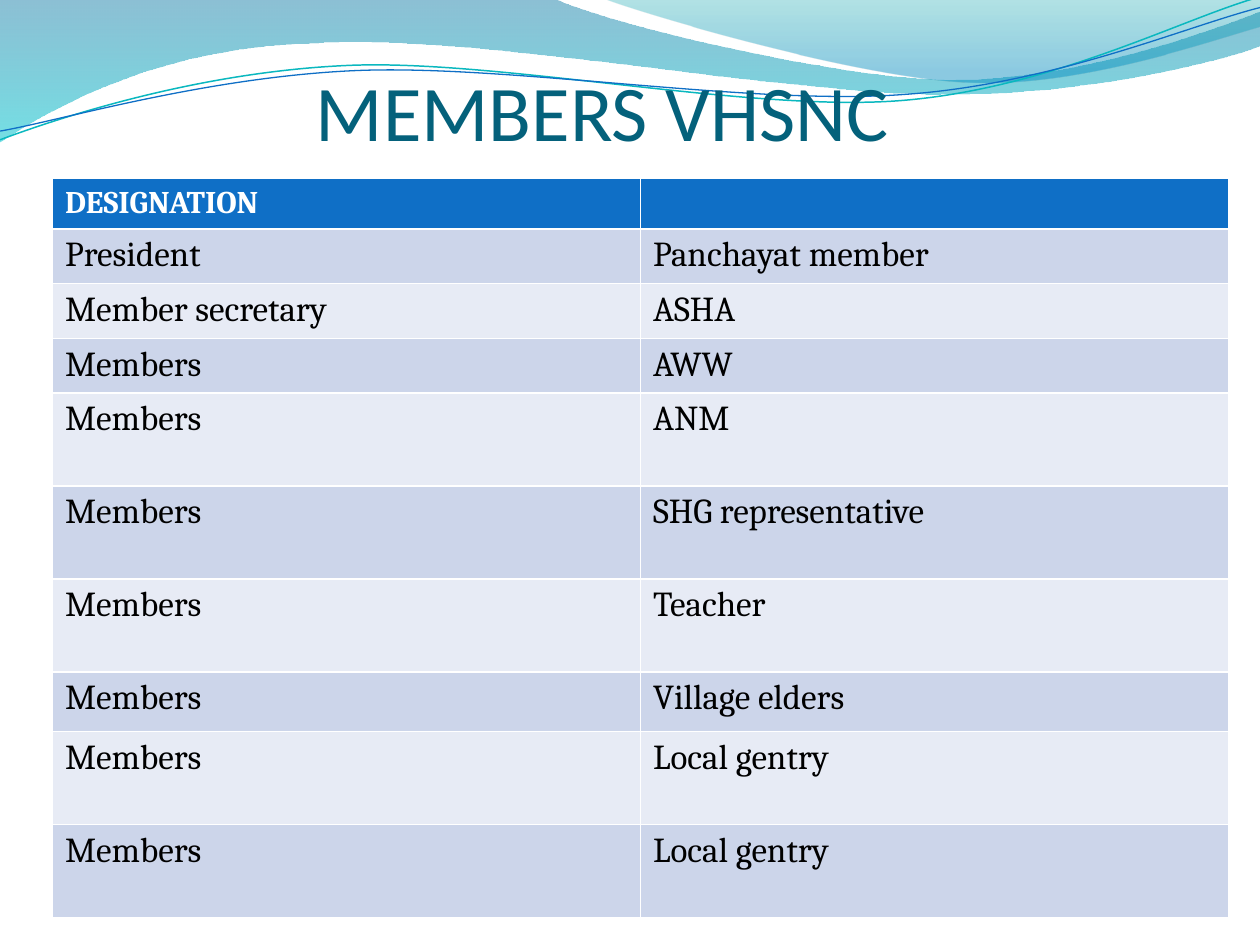
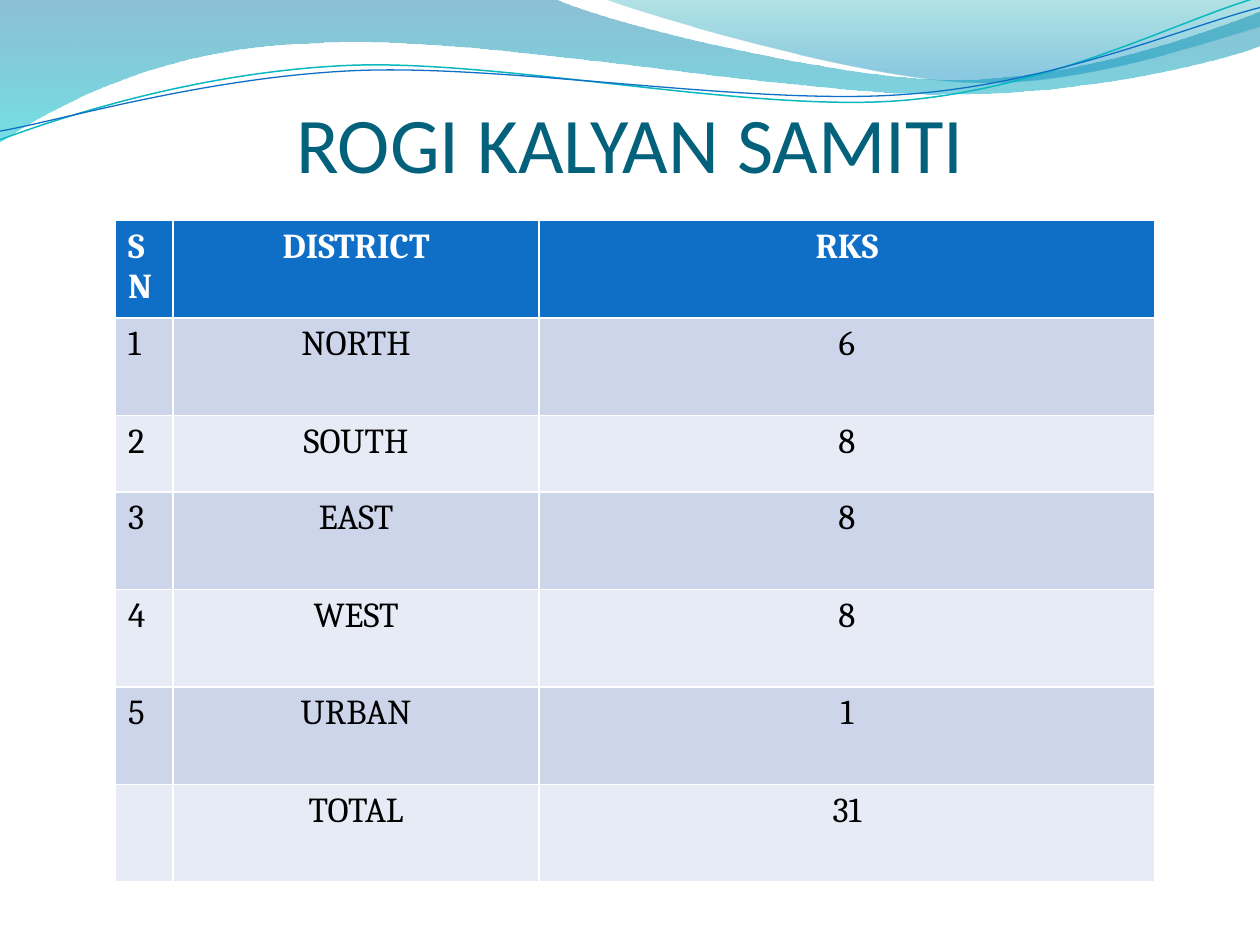
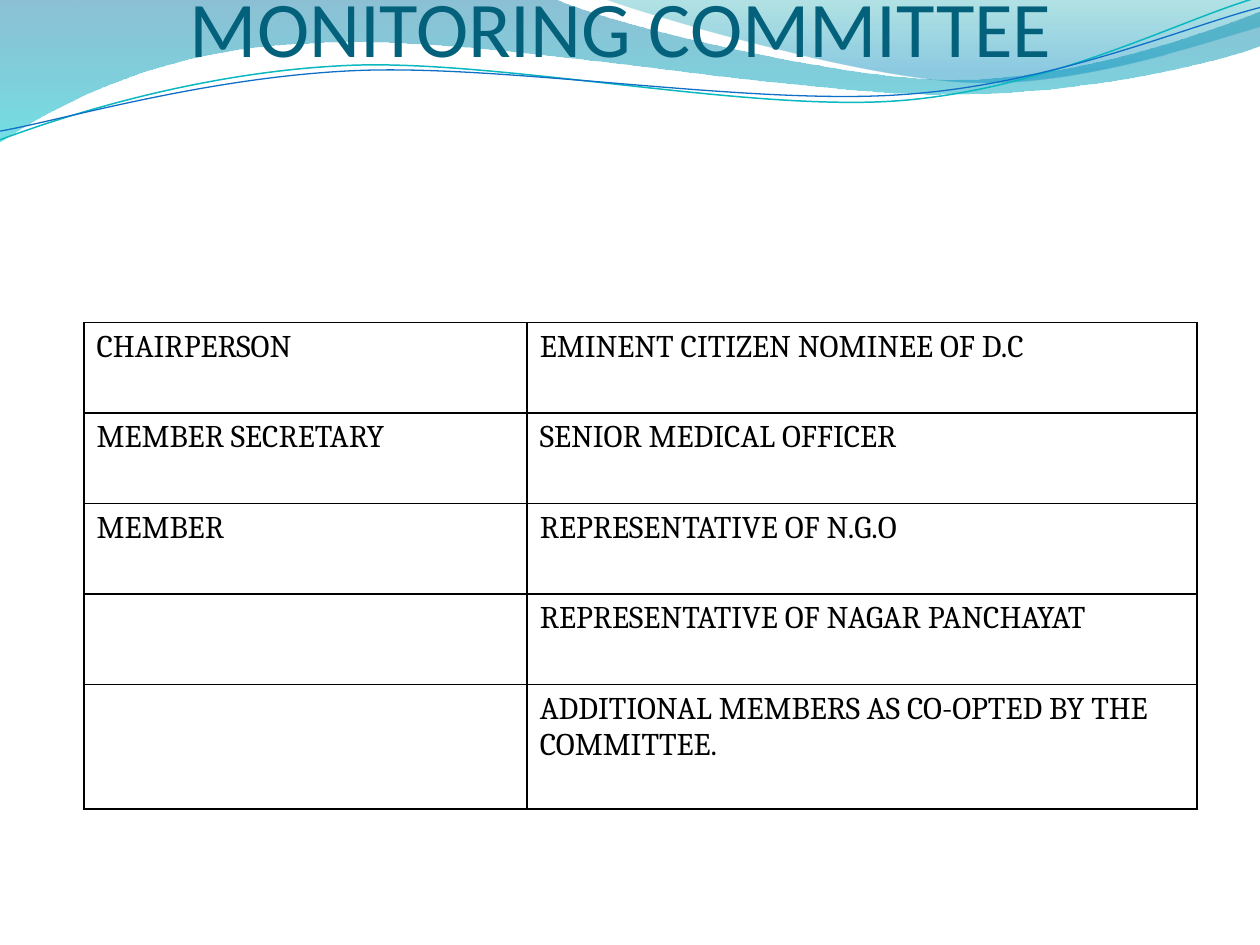
import pptx
import pptx.dml.color
import pptx.enum.text
import pptx.oxml
import pptx.oxml.ns
import pptx.util
from lxml import etree

Pt = pptx.util.Pt
PP_ALIGN = pptx.enum.text.PP_ALIGN

TITLE_FONT, TABLE_FONT = "Calibri", "Cambria"
TITLE_COLOR, HEADER_FILL = "04617B", "0F6FC6"
BAND_FILLS = ("CCD5EA", "E7EBF5")
WHITE, BLACK = "FFFFFF", "000000"

WIDE_WAVE = [
    (0, 0), (316.8, -0.7),
    (342.7, 12.2, 478.1, 45.4, 545.8, 45.4), (614.2, 45.4, 689.8, 18.7, 720, 6.5),
    (720.7, 25.9),
    (707.8, 31.7, 626.4, 54.7, 537.1, 54), (447.8, 54, 275, 20.2, 185, 24.5),
    (92.9, 25.9, 33.1, 59.8, -0.7, 81.4), (0, 0),
]
RIGHT_WAVE = [
    (344.9, -0.7),
    (366.5, 7.9, 491, 44.6, 553.7, 46.8), (616.3, 49.7, 691.9, 23, 720, 15.1),
    (720, 0), (344.9, -0.7),
]
TEAL_CURVE = [
    (0, 79.9),
    (34.6, 67, 113.8, 41, 199.4, 37.4), (284.4, 33.8, 427, 64.1, 513.4, 57.6),
    (599.8, 51.1, 675.4, 10.8, 718.6, -1.4),
]
BLUE_CURVE = [
    (0, 74.9),
    (33.8, 69.1, 118.1, 43.9, 203.8, 40.3), (290.2, 36.7, 429.8, 60.5, 516.2, 54),
    (601.9, 48.2, 677.5, 15.1, 720, 4.3),
]
FILLED_WAVES = [
    (WIDE_WAVE, [(0, "0074A1", 45), (100, "00C6CF", 55)]),
    (RIGHT_WAVE, [(0, "00A1A9", 30), (80, "008BBF", 45)]),
]
LINE_WAVES = [(TEAL_CURVE, "0AB8BF", 0.85), (BLUE_CURVE, "0F6FC6", 0.75)]

VHSNC_MEMBERS = [
    ("DESIGNATION", ""),
    ("President", "Panchayat member"),
    ("Member secretary", "ASHA"),
    ("Members", "AWW"),
    ("Members", "ANM"),
    ("Members", "SHG representative"),
    ("Members", "Teacher"),
    ("Members", "Village elders"),
    ("Members", "Local gentry"),
    ("Members", "Local gentry"),
]
RKS_DISTRICTS = [
    ("SN", "DISTRICT", "RKS"),
    ("1", "NORTH", "6"),
    ("2", "SOUTH", "8"),
    ("3", "EAST", "8"),
    ("4", "WEST", "8"),
    ("5", "URBAN", "1"),
    ("", "TOTAL", "31"),
]
COMMITTEE_MEMBERS = [
    ("CHAIRPERSON", "EMINENT CITIZEN NOMINEE OF D.C"),
    ("MEMBER SECRETARY", "SENIOR MEDICAL OFFICER"),
    ("MEMBER", "REPRESENTATIVE OF N.G.O"),
    ("", "REPRESENTATIVE OF NAGAR PANCHAYAT"),
    ("", "ADDITIONAL MEMBERS AS CO-OPTED BY THE COMMITTEE."),
]


def color(value):
    """Return the colour for a hex string."""
    return pptx.dml.color.RGBColor.from_string(value)


def add_child(parent, tag, **attributes):
    """Append a DrawingML element with the given attributes."""
    child = etree.SubElement(parent, pptx.oxml.ns.qn(tag))
    for name, value in attributes.items():
        child.set(name, str(value))
    return child


def bend_segments(shape, segments):
    """Join each three lines of a curved segment into one cubic curve."""
    lines = iter(list(shape.element.iter(pptx.oxml.ns.qn("a:lnTo"))))
    for segment in segments:
        line = next(lines)
        if len(segment) == 6:
            line.tag = pptx.oxml.ns.qn("a:cubicBezTo")
            for _ in range(2):
                extra = next(lines)
                line.append(extra[0])
                extra.getparent().remove(extra)


def add_outline(slide, outline, close):
    """Add a freeform of straight and cubic segments."""
    points = [(Pt(segment[i]), Pt(segment[i + 1]))
              for segment in outline for i in range(0, len(segment), 2)]
    builder = slide.shapes.build_freeform(*points[0])
    builder.add_line_segments(points[1:], close=False)
    shape = builder.convert_to_shape()
    bend_segments(shape, outline[1:])
    if close:
        add_child(next(shape.element.iter(pptx.oxml.ns.qn("a:path"))), "a:close")
    shape.shadow.inherit = False
    return shape


def set_gradient(shape, stops):
    """Fill a shape from top to bottom with translucent stops."""
    shape.fill.gradient()
    gradient = shape.element.spPr.find(pptx.oxml.ns.qn("a:gradFill"))
    for child in list(gradient):
        gradient.remove(child)
    stop_list = add_child(gradient, "a:gsLst")
    for position, value, opacity in stops:
        stop = add_child(stop_list, "a:gs", pos=position * 1000)
        stop_color = add_child(stop, "a:srgbClr", val=value)
        add_child(stop_color, "a:alpha", val=opacity * 1000)
    add_child(gradient, "a:lin", ang=5400000, scaled=0)


def add_waves(slide):
    """Draw the wave band along the top of a slide."""
    for outline, stops in FILLED_WAVES:
        shape = add_outline(slide, outline, True)
        set_gradient(shape, stops)
        shape.line.fill.background()
    for outline, line_color, width in LINE_WAVES:
        shape = add_outline(slide, outline, False)
        shape.fill.background()
        shape.line.color.rgb = color(line_color)
        shape.line.width = Pt(width)


def add_title(slide, text, box, indent=0, bottom_inset=0, alignment=PP_ALIGN.LEFT):
    """Add a title that stands on the bottom of its box."""
    shape = slide.shapes.add_textbox(*map(Pt, box))
    frame = shape.text_frame
    frame.word_wrap = True
    frame.vertical_anchor = pptx.enum.text.MSO_ANCHOR.BOTTOM
    frame.margin_left, frame.margin_right = Pt(indent), 0
    frame.margin_top, frame.margin_bottom = Pt(3.6), Pt(bottom_inset)
    frame.text = text
    paragraph = frame.paragraphs[0]
    paragraph.alignment = alignment
    font = paragraph.runs[0].font
    font.name, font.size = TITLE_FONT, Pt(45)
    font.color.rgb = color(TITLE_COLOR)


def set_borders(cell, border_color):
    """Draw the four borders of a cell."""
    properties = cell._tc.get_or_add_tcPr()
    for side in "LRTB":
        line = add_child(properties, f"a:ln{side}", w=Pt(1))
        add_child(add_child(line, "a:solidFill"), "a:srgbClr", val=border_color)


def format_text(cell, text, size, text_color, bold, alignment):
    """Write and format the text of a cell."""
    cell.text_frame.text = text
    paragraph = cell.text_frame.paragraphs[0]
    paragraph.alignment = alignment
    for run in paragraph.runs:
        run.font.name, run.font.size = TABLE_FONT, Pt(size)
        run.font.bold = bold
        run.font.color.rgb = color(text_color)


def add_grid(slide, rows, left, top, widths, heights, alignments):
    """Add an empty table and yield each cell with its row, text and alignment."""
    frame = slide.shapes.add_table(len(rows), len(widths), Pt(left), Pt(top),
                                   Pt(sum(widths)), Pt(sum(heights)))
    table = frame.table
    for column, width in zip(table.columns, widths):
        column.width = Pt(width)
    for row, height in zip(table.rows, heights):
        row.height = Pt(height)
    for row_index, texts in enumerate(rows):
        for column_index, text in enumerate(texts):
            yield table.cell(row_index, column_index), row_index, text, alignments[column_index]


def add_banded_table(slide, rows, left, top, widths, heights, alignments, header_size):
    """Add a table with a blue header and alternating row fills."""
    for cell, row, text, alignment in add_grid(slide, rows, left, top, widths, heights, alignments):
        header = row == 0
        cell.fill.solid()
        cell.fill.fore_color.rgb = color(HEADER_FILL if header else BAND_FILLS[(row - 1) % 2])
        format_text(cell, text, header_size if header else 20,
                    WHITE if header else BLACK, header, alignment)


def add_ruled_table(slide, rows, left, top, widths, heights, alignments):
    """Add a table with black rules and no fill."""
    for cell, _, text, alignment in add_grid(slide, rows, left, top, widths, heights, alignments):
        set_borders(cell, BLACK)
        cell.fill.background()
        format_text(cell, text, 18, BLACK, False, alignment)


def add_wave_slide(presentation):
    """Add a blank slide with the wave band."""
    slide = presentation.slides.add_slide(presentation.slide_layouts[6])
    add_waves(slide)
    return slide


def main():
    """Build the three committee slides."""
    presentation = pptx.Presentation()
    presentation.slide_width, presentation.slide_height = Pt(720), Pt(540)
    left, center = PP_ALIGN.LEFT, PP_ALIGN.CENTER

    slide = add_wave_slide(presentation)
    add_title(slide, "MEMBERS VHSNC", (36, 30, 648, 60), indent=144.5)
    add_banded_table(slide, VHSNC_MEMBERS, 30, 102, [336] * 2,
                     [28.8] + [30.2] * 3 + [53.2] * 3 + [33.8] + [53.2] * 2,
                     [left] * 2, 18)

    slide = add_wave_slide(presentation)
    add_title(slide, "ROGI KALYAN SAMITI", (36, 55.5, 648, 52.5), alignment=center)
    add_banded_table(slide, RKS_DISTRICTS, 66, 126, [33, 209, 352],
                     [55.7] * 2 + [43.8] + [55.7] * 4, [left, center, center], 20)

    slide = add_wave_slide(presentation)
    add_title(slide, "MONITORING COMMITTEE", (36, 0, 648, 96), indent=72.5, bottom_inset=54)
    add_ruled_table(slide, COMMITTEE_MEMBERS, 48, 184.4, [253.3, 382.8],
                    [51.7] * 4 + [71.1], [left] * 2)

    presentation.save("out.pptx")


if __name__ == "__main__":
    main()
